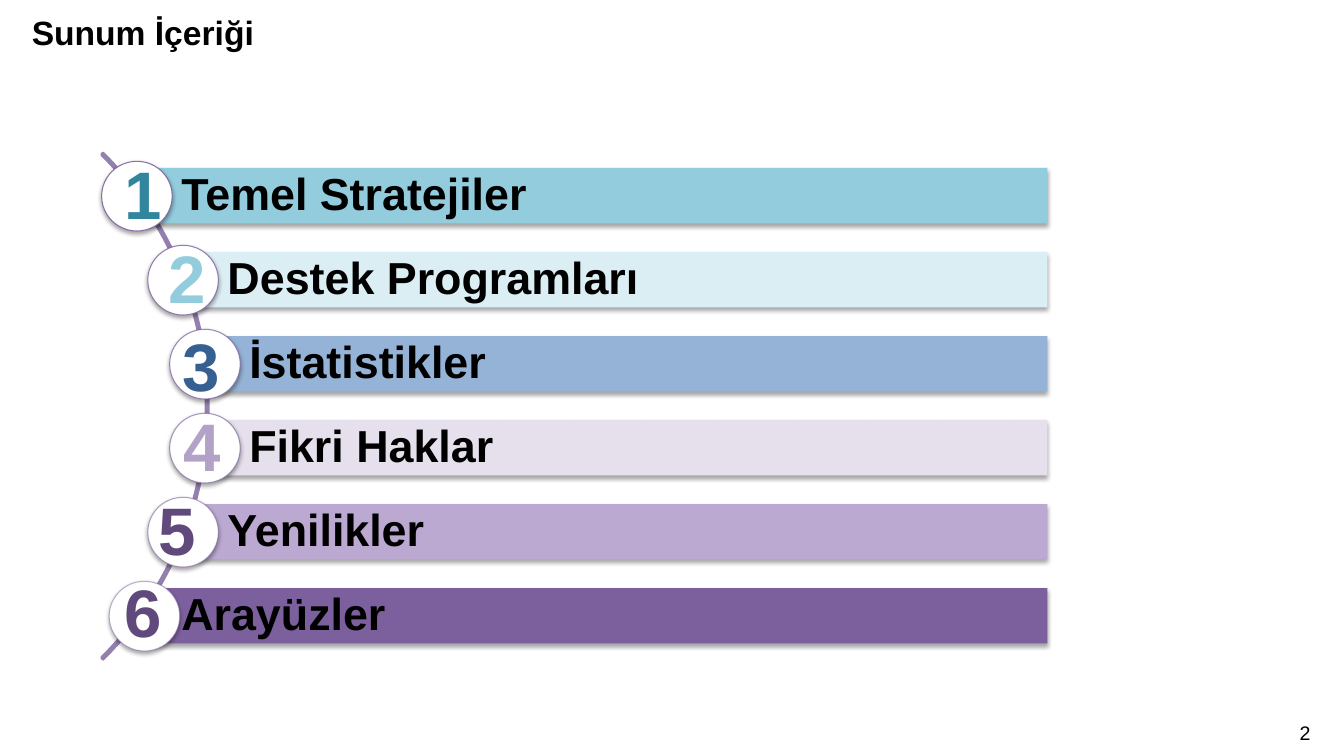
from dataclasses import dataclass

from lxml.etree import SubElement
from pptx import Presentation
from pptx.dml.color import RGBColor
from pptx.enum.shapes import MSO_SHAPE
from pptx.enum.text import MSO_ANCHOR, PP_ALIGN
from pptx.oxml.ns import qn
from pptx.util import Inches, Pt


@dataclass(frozen=True)
class Theme:
    font: str = "Arial"
    text: str = "000000"
    circle_fill: str = "FFFFFF"
    circle_line: str = "8064A2"
    arc_line: str = "9480AE"
    shadow: str = "000000"
    title_size: int = 24
    page_size: int = 14
    bar_size: int = 32
    number_size: int = 48


class AgendaSlide:
    """Draws agenda elements on a slide divided into 16 columns and 9 rows."""

    def __init__(self, presentation, theme):
        self.theme = theme
        self.column = presentation.slide_width / 16
        self.row = presentation.slide_height / 9
        self.slide = presentation.slides.add_slide(presentation.slide_layouts[6])

    def place(self, left, top, width, height):
        return (round(left * self.column), round(top * self.row),
                round(width * self.column), round(height * self.row))

    def set_text(self, shape, text, size, color, bold=True, align=PP_ALIGN.LEFT):
        paragraph = shape.text_frame.paragraphs[0]
        paragraph.text = text
        paragraph.alignment = align
        font = paragraph.font
        font.name, font.size, font.bold = self.theme.font, Pt(size), bold
        font.color.rgb = RGBColor.from_string(color)
        return paragraph

    def label(self, box, text, size, color, wrap=False, **style):
        shape = self.slide.shapes.add_textbox(*self.place(*box))
        shape.text_frame.word_wrap = wrap
        self.set_text(shape, text, size, color, **style)

    def shape(self, kind, box, fill=None, line=None, weight=0.75):
        shape = self.slide.shapes.add_shape(kind, *self.place(*box))
        if fill:
            shape.fill.solid()
            shape.fill.fore_color.rgb = RGBColor.from_string(fill)
        else:
            shape.fill.background()
        if line:
            shape.line.color.rgb = RGBColor.from_string(line)
            shape.line.width = Pt(weight)
        else:
            shape.line.fill.background()
        shape.shadow.inherit = False
        return shape

    def cast_shadow(self, shape):
        effects = shape.element.spPr.find(qn("a:effectLst"))
        shadow = SubElement(effects, qn("a:outerShdw"), blurRad=str(Pt(3.1)),
                            dist=str(Pt(1.8)), dir="5400000", rotWithShape="0")
        color = SubElement(shadow, qn("a:srgbClr"), val=self.theme.shadow)
        SubElement(color, qn("a:alpha"), val="35000")

    def arc(self, box):
        shape = self.shape(MSO_SHAPE.BLOCK_ARC, box, line=self.theme.arc_line, weight=2)
        for index, value in enumerate((189, 27, 0.003)):
            shape.adjustments[index] = value

    def bar(self, left, top, right, text, fill):
        shape = self.shape(MSO_SHAPE.RECTANGLE, (left, top, right - left, 0.66), fill)
        self.cast_shadow(shape)
        frame = shape.text_frame
        frame.word_wrap = True
        frame.vertical_anchor = MSO_ANCHOR.MIDDLE
        frame.margin_left = Inches(0.44)
        frame.margin_right = frame.margin_top = frame.margin_bottom = Inches(0.09)
        paragraph = self.set_text(shape, text, self.theme.bar_size, self.theme.text)
        paragraph.line_spacing = 0.9

    def circle(self, left, top, opacity):
        shape = self.shape(MSO_SHAPE.OVAL, (left, top, 0.84, 0.83),
                           self.theme.circle_fill, self.theme.circle_line)
        color = shape.element.spPr.find(f"{qn('a:ln')}//{qn('a:srgbClr')}")
        SubElement(color, qn("a:alpha"), val=str(opacity * 1000))
        self.cast_shadow(shape)

    def number(self, left, top, text, color):
        self.label((left, top, 0.7, 1.09), text, self.theme.number_size, color,
                   align=PP_ALIGN.CENTER)


TOPICS = [
    ("Temel Stratejiler", "93CDDD", 1.63, 1.21, "31859C", (1.36, 1.75)),
    ("Destek Programları", "DBEEF4", 2.18, 1.76, "93CDDD", (1.88, 2.76)),
    ("İstatistikler", "95B3D7", 2.44, 2.02, "376092", (2.05, 3.8)),
    ("Fikri Haklar", "E6E0EC", 2.44, 2.02, "B3A2C7", (2.06, 4.75)),
    ("Yenilikler", "BBA9D1", 2.18, 1.76, "604A7B", (1.76, 5.76)),
    ("Arayüzler", "7C609E", 1.63, 1.3, "604A7B", (1.36, 6.73)),
]


def main():
    presentation = Presentation()
    presentation.slide_width, presentation.slide_height = Inches(13.33), Inches(7.5)
    theme = Theme()
    agenda = AgendaSlide(presentation, theme)
    agenda.label((0.26, 0.08, 2.9, 0.6), "Sunum İçeriği", theme.title_size, theme.text)
    agenda.label((12.43, 8.52, 3.29, 0.48), "2", theme.page_size, theme.text,
                 wrap=True, bold=False, align=PP_ALIGN.RIGHT)
    agenda.arc((-6.05, 0.58, 8.53, 8.51))
    for index, (text, fill, bar_left, circle_left, _, _) in enumerate(TOPICS):
        top = 2 + index
        agenda.bar(bar_left, top, 12.47, text, fill)
        agenda.circle(circle_left, top - 0.08, 90 - 8 * index)
    for index, (*_, color, position) in enumerate(TOPICS, start=1):
        agenda.number(*position, str(index), color)
    presentation.save("out.pptx")


if __name__ == "__main__":
    main()
